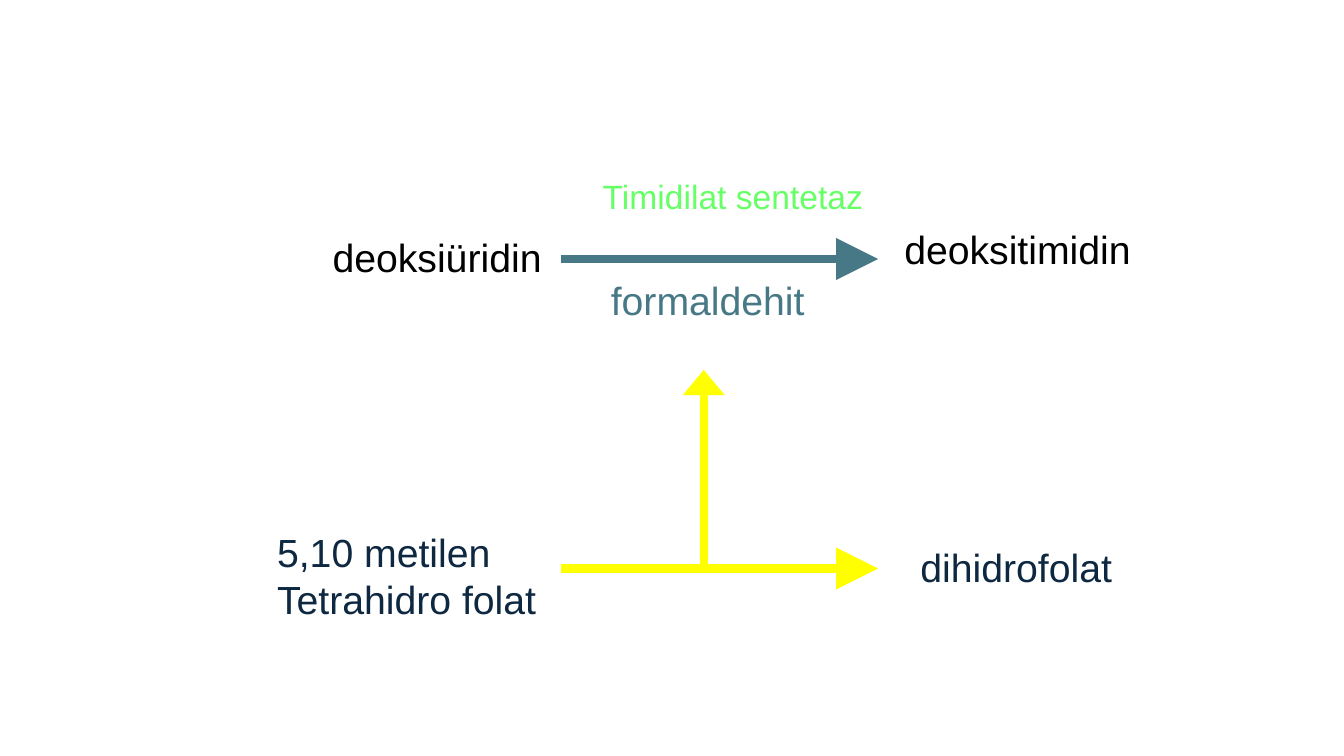
"""Slide: thymidylate synthase reaction with its folate cofactor."""
from lxml import etree
from pptx import Presentation, util as u
from pptx.dml.color import RGBColor
from pptx.enum import shapes, text
from pptx.oxml.ns import qn

COLORS = {"black": "000000", "teal": "467886", "navy": "0E2841",
          "green": "66FF66", "yellow": "FFFF00"}
WIDTH, HEIGHT = 13.33, 7.5
START, BRANCH, END = 5.56, 6.98, 8.71
REACTION, COFACTOR, BRANCH_TOP = 2.57, 5.64, 3.67

LABELS = [
    ("deoksiüridin", (3.2, 2.27, 2.3, 0.57), "black", 28, False),
    ("deoksitimidin", (8.87, 2.19, 2.48, 0.57), "black", 28, False),
    ("5,10 metilen\nTetrahidro folat", (2.65, 5.19, 2.86, 1.03), "navy", 28, False),
    ("Timidilat sentetaz", (5.88, 1.7, 2.84, 0.5), "green", 24, True),
    ("dihidrofolat", (9.03, 5.34, 2.14, 0.57), "navy", 28, False),
    ("formaldehit", (5.96, 2.69, 2.15, 0.57), "teal", 28, False),
]
ARROWS = [
    ((START, REACTION, END, REACTION), "teal", "lg"),
    ((START, COFACTOR, END, COFACTOR), "yellow", "lg"),
    ((BRANCH, COFACTOR, BRANCH, BRANCH_TOP), "yellow", "med"),
]


def add_label(s, content, box, color, size, wrap):
    tf = s.shapes.add_textbox(*map(u.Inches, box)).text_frame
    tf.word_wrap = wrap
    tf.auto_size = text.MSO_AUTO_SIZE.SHAPE_TO_FIT_TEXT
    for i, line in enumerate(content.split("\n")):
        p = tf.paragraphs[0] if i == 0 else tf.add_paragraph()
        r = p.add_run()
        r.text = line
        r.font.name = "Arial"
        r.font.size = u.Pt(size)
        r.font.color.rgb = RGBColor.from_string(COLORS[color])


def add_arrow(s, ends, color, length):
    sp = s.shapes.add_connector(shapes.MSO_CONNECTOR.STRAIGHT, *map(u.Inches, ends))
    sp.line.color.rgb = RGBColor.from_string(COLORS[color])
    sp.line.width = u.Pt(6)
    etree.SubElement(sp.line._get_or_add_ln(), qn("a:tailEnd"),
                     type="triangle", w="lg", len=length)
    etree.SubElement(sp._element.spPr, qn("a:effectLst"))


def main():
    prs = Presentation()
    prs.slide_width, prs.slide_height = u.Inches(WIDTH), u.Inches(HEIGHT)
    s = prs.slides.add_slide(prs.slide_layouts[6])
    for ends, color, length in ARROWS:
        add_arrow(s, ends, color, length)
    for content, box, color, size, wrap in LABELS:
        add_label(s, content, box, color=color, size=size, wrap=wrap)
    prs.save("out.pptx")


if __name__ == "__main__":
    main()
